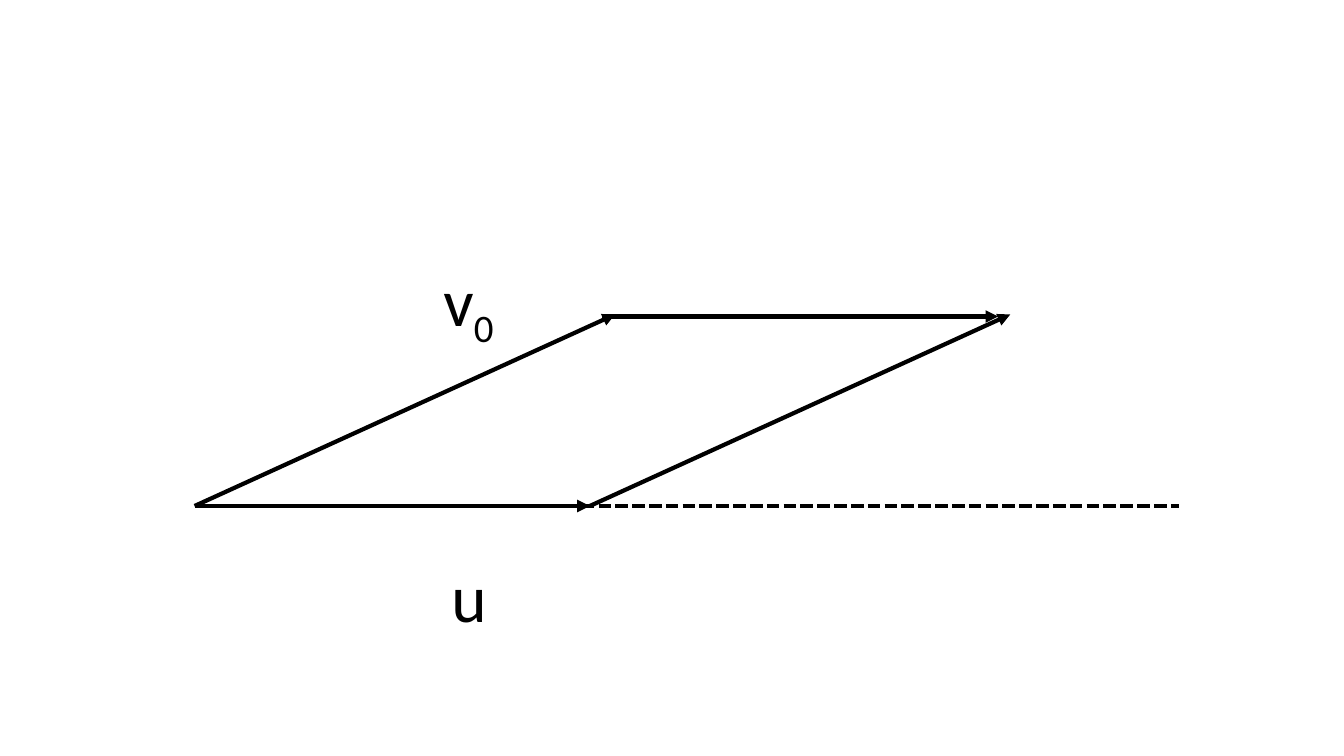
from dataclasses import dataclass

from lxml import etree
from pptx import Presentation
from pptx import util as u
from pptx.dml.color import RGBColor
from pptx.enum import dml, shapes, text
from pptx.oxml.ns import qn


@dataclass(frozen=True)
class Theme:
    ink: RGBColor = RGBColor(0x00, 0x00, 0x00)
    font: str = "Calibri"
    label_size: int = 48
    line_width: int = 3


class VectorSlide:
    """Holds the theme and the slide that is being drawn."""

    def __init__(self, presentation, theme):
        self.theme = theme
        self.slide = presentation.slides.add_slide(presentation.slide_layouts[6])

    def line(self, start, end, dash=None):
        points = [u.Inches(value) for value in (*start, *end)]
        connector = self.slide.shapes.add_connector(
            shapes.MSO_CONNECTOR.STRAIGHT, *points)
        connector.line.color.rgb = self.theme.ink
        connector.line.width = u.Pt(self.theme.line_width)
        if dash is not None:
            connector.line.dash_style = dash
        etree.SubElement(connector._element.spPr, qn("a:effectLst"))
        return connector

    def arrow(self, start, end):
        connector = self.line(start, end)
        outline = connector.line._get_or_add_ln()
        etree.SubElement(outline, qn("a:tailEnd"), type="triangle")

    def label(self, left, top, width, height, name, subscript=""):
        box = self.slide.shapes.add_textbox(
            *(u.Inches(value) for value in (left, top, width, height)))
        frame = box.text_frame
        frame.word_wrap = False
        frame.auto_size = text.MSO_AUTO_SIZE.SHAPE_TO_FIT_TEXT
        paragraph = frame.paragraphs[0]
        self.run(paragraph, name)
        if subscript:
            self.run(paragraph, subscript, baseline=-25000)

    def run(self, paragraph, content, baseline=0):
        run = paragraph.add_run()
        run.text = content
        run.font.name = self.theme.font
        run.font.size = u.Pt(self.theme.label_size)
        run.font.color.rgb = self.theme.ink
        if baseline:
            run.font._element.set("baseline", str(baseline))


def main():
    presentation = Presentation()
    presentation.slide_width = u.Inches(13.33)
    presentation.slide_height = u.Inches(7.5)
    diagram = VectorSlide(presentation, Theme())

    # Corners of the parallelogram
    base_y, top_y = 5.02, 3.12
    origin, u_tip = (1.93, base_y), (5.85, base_y)
    v_tip, sum_tip = (6.1, top_y), (10.02, top_y)

    # Vector v0 and the dashed base line
    diagram.arrow(origin, v_tip)
    diagram.line(origin, (11.69, base_y), dash=dml.MSO_LINE.SQUARE_DOT)
    diagram.label(4.3, 2.52, 0.73, 0.91, "v", subscript="0")

    # Vector u
    diagram.arrow(origin, u_tip)
    diagram.label(4.38, 5.46, 0.56, 0.91, "u")

    # Opposite sides
    diagram.arrow(u_tip, sum_tip)
    diagram.arrow((5.97, 3.14), (9.9, 3.14))

    presentation.save("out.pptx")


if __name__ == "__main__":
    main()
